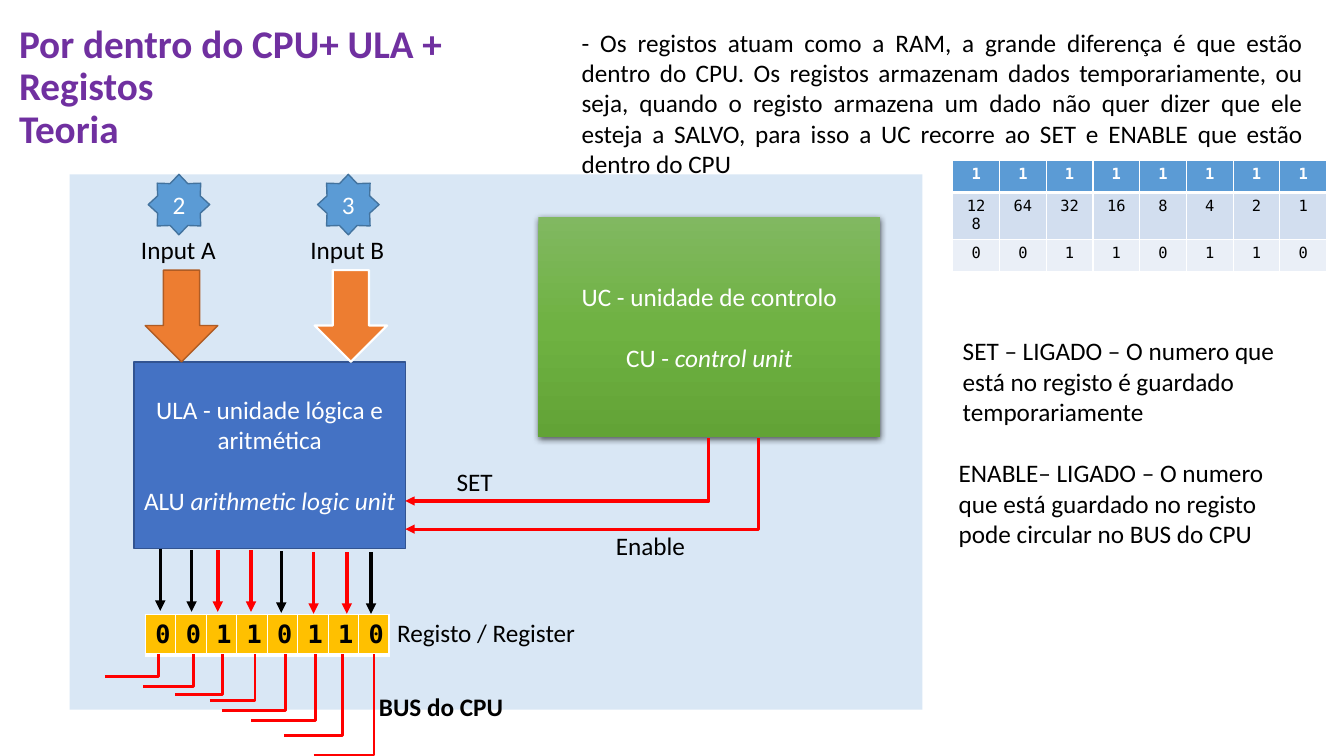
"""Build the slide on the inside of the CPU: ALU, control unit and registers."""
from copy import deepcopy
from dataclasses import dataclass

from lxml.etree import SubElement
from pptx import Presentation
from pptx.dml.color import RGBColor
from pptx.enum.shapes import MSO_CONNECTOR, MSO_SHAPE
from pptx.enum.text import MSO_ANCHOR, PP_ALIGN
from pptx.oxml.ns import qn
from pptx.util import Inches, Pt

BLACK = RGBColor(0x00, 0x00, 0x00)
WHITE = RGBColor(0xFF, 0xFF, 0xFF)
RED = RGBColor(0xFF, 0x00, 0x00)
PURPLE = RGBColor(0x70, 0x30, 0xA0)
SKY = RGBColor(0x5B, 0x9B, 0xD5)
SKY_EDGE = RGBColor(0x43, 0x73, 0x9E)
BLUE = RGBColor(0x44, 0x72, 0xC4)
BLUE_EDGE = RGBColor(0x32, 0x54, 0x91)
ORANGE = RGBColor(0xED, 0x7D, 0x31)
ORANGE_EDGE = RGBColor(0xAF, 0x5C, 0x24)
GOLD = RGBColor(0xFF, 0xC0, 0x00)
BAND = RGBColor(0xD2, 0xDE, 0xEF)
PALE_BAND = RGBColor(0xEA, 0xEF, 0xF7)
GREENS = (RGBColor(0x81, 0xB8, 0x61), RGBColor(0x6F, 0xB2, 0x42), RGBColor(0x62, 0xA3, 0x36))
MONO = "DejaVu Sans Mono"
BITS = "00110110"


@dataclass
class Label:
    text: str
    box: tuple[float, float, float, float]
    wrap: bool = True
    align: PP_ALIGN = PP_ALIGN.LEFT
    bold: bool = False


@dataclass
class Operand:
    name: str
    value: str
    left: float
    edge: RGBColor
    edge_width: float


@dataclass
class BitWire:
    x: float
    top: float
    bus_x: float
    bus_left: float
    bus_bottom: float


@dataclass
class TableRow:
    values: list[str]
    height: float
    fill: RGBColor
    color: RGBColor = BLACK
    bold: bool = False
    bottom_border: float = 1


LABELS = [
    Label("Registo / Register", (3.84, 6.08, 1.99, 0.4), wrap=False),
    Label("- Os registos atuam como a RAM, a grande diferença é que estão dentro do CPU. "
          "Os registos armazenam dados temporariamente, ou seja, quando o registo armazena "
          "um dado não quer dizer que ele esteja a SALVO, para isso a UC recorre ao SET e "
          "ENABLE que estão dentro do CPU", (5.67, 0.22, 7.35, 1.62), align=PP_ALIGN.JUSTIFY),
    Label("SET", (4.43, 4.58, 0.56, 0.4), wrap=False),
    Label("Enable", (6.01, 5.21, 0.9, 0.4), wrap=False),
    Label("SET – LIGADO – O numero que está no registo é guardado temporariamente",
          (9.45, 3.28, 3.42, 1.05)),
    Label("ENABLE– LIGADO – O numero que está guardado no registo pode circular no BUS do CPU",
          (9.41, 4.49, 3.42, 1.01)),
    Label("BUS do CPU", (3.66, 6.81, 1.45, 0.4), wrap=False, bold=True),
]
OPERANDS = [
    Operand("Input A", "2", 1.3, ORANGE_EDGE, 1),
    Operand("Input B", "3", 2.98, WHITE, 1.5),
]
BIT_WIRES = [
    BitWire(1.59, 5.45, 1.57, 1.04, 6.71),
    BitWire(1.9, 5.46, 1.92, 1.42, 6.81),
    BitWire(2.16, 5.46, 2.21, 1.74, 6.89),
    BitWire(2.49, 5.46, 2.53, 2.08, 6.95),
    BitWire(2.79, 5.47, 2.83, 2.2, 7.05),
    BitWire(3.11, 5.48, 3.13, 2.49, 7.15),
    BitWire(3.44, 5.48, 3.4, 2.82, 7.3),
    BitWire(3.68, 5.48, 3.71, 3.11, 7.49),
]
REGISTER_ROWS = [TableRow(list(BITS), 0.4, GOLD, bold=True, bottom_border=3)]
WEIGHT_ROWS = [
    TableRow(["1"] * 8, 0.32, SKY, WHITE, True, 3),
    TableRow([str(2 ** power) for power in range(7, -1, -1)], 0.37, BAND),
    TableRow(list(BITS), 0.32, PALE_BAND),
]


def write(frame, text: str, *, size: float = 18, font: str = "Calibri", color: RGBColor = BLACK,
          bold: bool = False, align: PP_ALIGN = PP_ALIGN.LEFT, gap: float = 0,
          line_spacing: float = 1.0) -> None:
    """Write one paragraph per line; text between underscores is italic."""
    for index, line in enumerate(text.split("\n")):
        para = frame.add_paragraph() if index else frame.paragraphs[0]
        para.alignment, para.line_spacing = align, line_spacing
        para.space_before = Pt(gap if index else 0)
        for part, words in enumerate(line.split("_")):
            if words:
                span = para.add_run()
                span.text = words
                span.font.size, span.font.name, span.font.bold = Pt(size), font, bold
                span.font.italic = part % 2 == 1
                span.font.color.rgb = color


def add_text(page, text: str, box: tuple, *, wrap: bool = True,
             anchor: MSO_ANCHOR = MSO_ANCHOR.TOP, **style) -> None:
    """Add a text box."""
    frame = page.shapes.add_textbox(*map(Inches, box)).text_frame
    frame.word_wrap, frame.vertical_anchor = wrap, anchor
    write(frame, text, **style)


def add_block(page, kind: MSO_SHAPE, box: tuple, fill: RGBColor, edge: RGBColor | None = None,
              edge_width: float = 1, text: str = ""):
    """Add a filled preset shape with centred white text."""
    block = page.shapes.add_shape(kind, *map(Inches, box))
    block.shadow.inherit = False
    block.fill.solid()
    block.fill.fore_color.rgb = fill
    if edge is None:
        block.line.fill.background()
    else:
        block.line.color.rgb, block.line.width = edge, Pt(edge_width)
    block.text_frame.vertical_anchor = MSO_ANCHOR.MIDDLE
    write(block.text_frame, text, color=WHITE, align=PP_ALIGN.CENTER, gap=22)
    return block


def add_wire(page, start: tuple, end: tuple, color: RGBColor, width: float,
             arrow: str = "", bent: bool = False) -> None:
    """Add a straight wire, or one that runs across and then up."""
    kind = MSO_CONNECTOR.ELBOW if bent else MSO_CONNECTOR.STRAIGHT
    wire = page.shapes.add_connector(kind, *map(Inches, start + end))
    wire.line.color.rgb, wire.line.width = color, Pt(width)
    properties = wire._element.spPr
    if bent:
        guides = properties.find(qn("a:prstGeom")).get_or_add_avLst()
        SubElement(guides, qn("a:gd"), name="adj1", fmla="val 100000")
    if arrow:
        SubElement(properties.find(qn("a:ln")), qn(f"a:{arrow}"), type="triangle")
    SubElement(properties, qn("a:effectLst"))


def add_bit_table(page, rows: list[TableRow], box: tuple, **style) -> None:
    """Add a table with eight equal columns and white borders."""
    table = page.shapes.add_table(len(rows), len(BITS), *map(Inches, box)).table
    table.first_row = table.horz_banding = False
    for column in table.columns:
        column.width = Inches(box[2] / len(BITS))
    for row_index, row in enumerate(rows):
        table.rows[row_index].height = Inches(row.height)
        for column_index, value in enumerate(row.values):
            cell = table.cell(row_index, column_index)
            for side in "LRTB":
                width = row.bottom_border if side == "B" else 1
                border = SubElement(cell._tc.get_or_add_tcPr(), qn(f"a:ln{side}"),
                                    w=str(Pt(width)))
                SubElement(SubElement(border, qn("a:solidFill")), qn("a:srgbClr"),
                           val=str(WHITE))
            cell.fill.solid()
            cell.fill.fore_color.rgb = row.fill
            write(cell.text_frame, value, font=MONO, color=row.color, bold=row.bold, **style)


def add_control_unit(page) -> None:
    """Add the control unit with its green gradient and soft shadow."""
    unit = add_block(page, MSO_SHAPE.RECTANGLE, (5.34, 2.15, 3.39, 2.19), GREENS[1],
                     text="UC - unidade de controlo\nCU - _control unit_")
    unit.fill.gradient()
    unit.fill.gradient_angle = 270
    properties = unit._element.spPr
    stop_list = properties.find(qn("a:gradFill")).find(qn("a:gsLst"))
    stop_list.insert(1, deepcopy(stop_list[0]))
    for stop, position, color in zip(unit.fill.gradient_stops, (0, 0.5, 1), GREENS):
        stop.position, stop.color.rgb = position, color
    shadow = SubElement(properties.find(qn("a:effectLst")), qn("a:outerShdw"),
                        blurRad=str(Pt(4.5)), dist=str(Pt(1.5)), dir="5400000",
                        algn="ctr", rotWithShape="0")
    SubElement(SubElement(shadow, qn("a:srgbClr"), val=str(BLACK)), qn("a:alpha"), val="63000")


def main() -> None:
    """Draw the slide and save it."""
    deck = Presentation()
    deck.slide_width, deck.slide_height = Inches(13.33), Inches(7.5)
    page = deck.slides.add_slide(deck.slide_layouts[6])
    cpu = add_block(page, MSO_SHAPE.RECTANGLE, (0.69, 1.73, 8.46, 5.31), SKY)
    tint = cpu._element.spPr.find(qn("a:solidFill"))[0]
    SubElement(tint, qn("a:alpha"), val="23000")
    add_text(page, "Por dentro do CPU+ ULA + Registos\nTeoria", (0.09, 0.15, 5.58, 1.45),
             anchor=MSO_ANCHOR.MIDDLE, size=28, color=PURPLE, bold=True, line_spacing=0.9)
    add_block(page, MSO_SHAPE.RECTANGLE, (1.33, 3.59, 2.69, 1.85), BLUE, BLUE_EDGE,
              text="ULA - unidade lógica e aritmética\nALU _arithmetic logic unit_")
    add_control_unit(page)
    for operand in OPERANDS:
        add_block(page, MSO_SHAPE.DOWN_ARROW, (operand.left + 0.14, 2.68, 0.72, 0.91), ORANGE,
                  operand.edge, operand.edge_width)
        add_text(page, operand.name, (operand.left, 2.28, 0.99, 0.4))
        add_block(page, MSO_SHAPE.STAR_8_POINT, (operand.left + 0.17, 1.73, 0.61, 0.6), SKY,
                  SKY_EDGE, text=operand.value)
    add_bit_table(page, REGISTER_ROWS, (1.44, 6.1, 2.42, 0.4))
    add_bit_table(page, WEIGHT_ROWS, (9.45, 1.59, 3.71, 1.01), size=11, align=PP_ALIGN.CENTER)
    for bit, wire in zip(BITS, BIT_WIRES):
        add_wire(page, (wire.x, wire.top), (wire.x, wire.top + 0.61),
                 RED if bit == "1" else BLACK, 2.5, arrow="tailEnd")
        add_wire(page, (wire.bus_left, wire.bus_bottom), (wire.bus_x, 6.49), RED, 2, bent=True)
    for control_x, control_y in ((7.03, 4.97), (7.52, 5.25)):
        add_wire(page, (4.02, control_y), (control_x, 4.35), RED, 2.25, arrow="headEnd", bent=True)
    for label in LABELS:
        add_text(page, label.text, label.box, wrap=label.wrap, align=label.align, bold=label.bold)
    deck.save("out.pptx")


if __name__ == "__main__":
    main()
